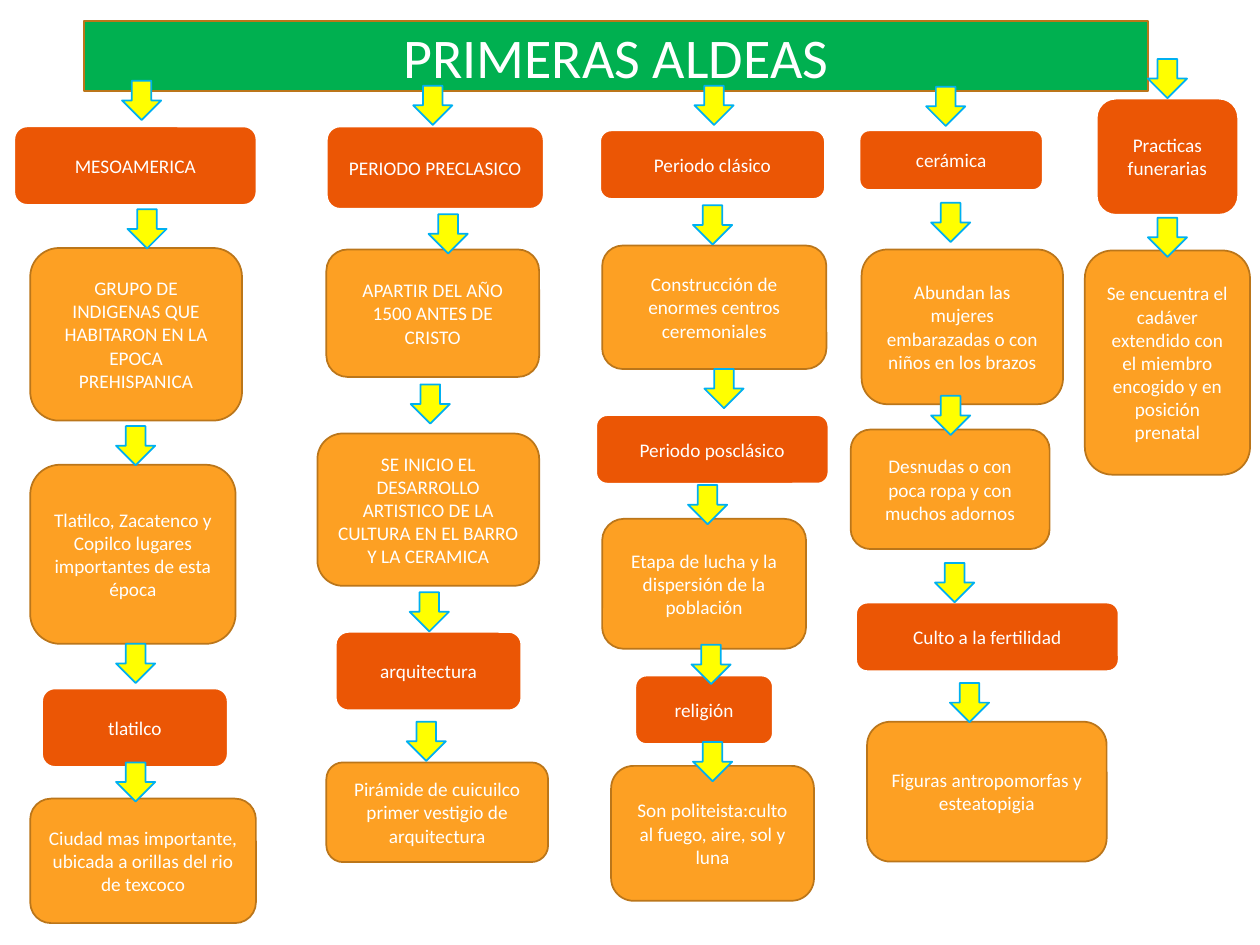
from lxml import etree
from pptx import Presentation
from pptx.dml.color import RGBColor
from pptx.enum.shapes import MSO_SHAPE
from pptx.enum.text import MSO_ANCHOR, MSO_AUTO_SIZE, PP_ALIGN
from pptx.oxml.ns import qn
from pptx.util import Cm, Pt

ROUND = MSO_SHAPE.ROUNDED_RECTANGLE
ARROW = MSO_SHAPE.DOWN_ARROW
MIDDLE = MSO_ANCHOR.MIDDLE
CENTER = PP_ALIGN.CENTER
FIXED = MSO_AUTO_SIZE.NONE

COLORS = {
    "title": "00B050",
    "head": "EB5605",
    "fact": "FDA023",
    "arrow": "FFFF00",
    "brown": "BB761A",
    "blue": "00B0F0",
    "white": "FFFFFF",
}
EDGES = {
    "title": ("brown", 1),
    "head": ("white", 1.5),
    "fact": ("brown", 1),
    "arrow": ("blue", 1),
}
SIDE = 0.79

columns = [
    [
        ("head", 0.28, 2.54, 4.9, 1.6, "MESOAMERICA", 2.46, 1.63),
        ("fact", 0.61, 5, 4.27, 3.48,
         "GRUPO DE INDIGENAS QUE HABITARON EN LA EPOCA PREHISPANICA", 2.57, 4.22),
        ("fact", 0.61, 9.37, 4.14, 3.61,
         "Tlatilco, Zacatenco y Copilco lugares importantes de esta época", 2.34, 8.59),
        ("head", 0.84, 13.87, 3.76, 1.6, "tlatilco", 2.34, 12.98),
        ("fact", 0.61, 16.1, 4.55, 2.51,
         "Ciudad mas importante, ubicada a orillas del rio de texcoco", 2.34, 15.37),
    ],
    [
        ("head", 6.58, 2.54, 4.39, 1.68, "PERIODO PRECLASICO", 8.33, 1.73),
        ("fact", 6.58, 5.03, 4.29, 2.57,
         "APARTIR DEL AÑO 1500 ANTES DE CRISTO", 8.64, 4.32),
        ("fact", 6.4, 8.74, 4.47, 3.07,
         "SE INICIO EL DESARROLLO ARTISTICO DE LA CULTURA EN EL BARRO Y LA CERAMICA",
         8.28, 7.75),
        ("head", 6.76, 12.73, 3.76, 1.6, "arquitectura", 8.26, 11.94),
        ("fact", 6.58, 15.37, 4.47, 2.01,
         "Pirámide de cuicuilco primer vestigio de arquitectura", 8.2, 14.55),
    ],
    [
        ("head", 12.09, 2.62, 4.55, 1.4, "Periodo clásico", 14, 1.73),
        ("fact", 12.14, 4.95, 4.52, 2.49,
         "Construcción de enormes centros ceremoniales", 13.97, 4.14),
        ("head", 12.01, 8.36, 4.7, 1.4, "Periodo posclásico", 14.2, 7.44),
        ("fact", 12.14, 10.46, 4.11, 2.62,
         "Etapa de lucha y la dispersión de la población", 13.87, 9.78),
        ("head", 12.8, 13.61, 2.79, 1.4, "religión", 13.94, 13),
        ("fact", 12.32, 15.44, 4.09, 2.72,
         "Son politeista:culto al fuego, aire, sol y luna", 13.97, 14.96),
    ],
    [
        ("head", 17.32, 2.62, 3.71, 1.22, "cerámica", 18.67, 1.75),
        ("fact", 17.37, 5.03, 4.06, 3.12,
         "Abundan las mujeres embarazadas o con niños en los brazos", 18.77, 4.09),
        ("fact", 17.15, 8.66, 4.01, 2.41,
         "Desnudas o con poca ropa y con muchos adornos", 18.77, 7.98),
        ("head", 17.25, 12.14, 5.31, 1.4, "Culto a la fertilidad", 18.85, 11.35),
        ("fact", 17.48, 14.55, 4.83, 2.82,
         "Figuras antropomorfas y esteatopigia", 19.15, 13.77),
    ],
    [
        ("head", 22.1, 1.98, 2.87, 2.36, "Practicas funerarias", 23.14, 1.19),
        ("fact", 21.87, 5.05, 3.33, 4.52,
         "Se encuentra el cadáver extendido con el miembro encogido y en posición prenatal",
         23.14, 4.39),
    ],
]


def paint(shape, kind):
    edge, width = EDGES[kind]
    shape.fill.solid()
    shape.fill.fore_color.rgb = RGBColor.from_string(COLORS[kind])
    shape.line.color.rgb = RGBColor.from_string(COLORS[edge])
    shape.line.width = Pt(width)


def write(shape, text, size):
    frame = shape.text_frame
    frame.text = text
    frame.word_wrap = True
    frame.auto_size = FIXED
    frame.vertical_anchor = MIDDLE
    para = frame.paragraphs[0]
    para.alignment = CENTER
    para.font.name = "Calibri"
    para.font.size = Pt(size)
    para.font.color.rgb = RGBColor.from_string(COLORS["white"])


deck = Presentation()
deck.slide_width = Cm(25.4)
deck.slide_height = Cm(19.05)
slide = deck.slides.add_slide(deck.slide_layouts[5])
shapes = slide.shapes

title = shapes.title
title.left, title.top = Cm(1.7), Cm(0.43)
title.width, title.height = Cm(21.44), Cm(1.4)
shell = etree.SubElement(title.element.spPr, qn("a:prstGeom"), prst="roundRect")
etree.SubElement(shell, qn("a:avLst"))
paint(title, "title")
write(title, "PRIMERAS ALDEAS", 32)

for column in columns:
    for kind, left, top, width, height, text, *_ in column:
        box = shapes.add_shape(ROUND, Cm(left), Cm(top), Cm(width), Cm(height))
        box.shadow.inherit = False
        paint(box, kind)
        write(box, text, 11)

for column in columns:
    for *_, left, top in column:
        arrow = shapes.add_shape(ARROW, Cm(left), Cm(top), Cm(SIDE), Cm(SIDE))
        arrow.shadow.inherit = False
        paint(arrow, "arrow")

deck.save("out.pptx")
